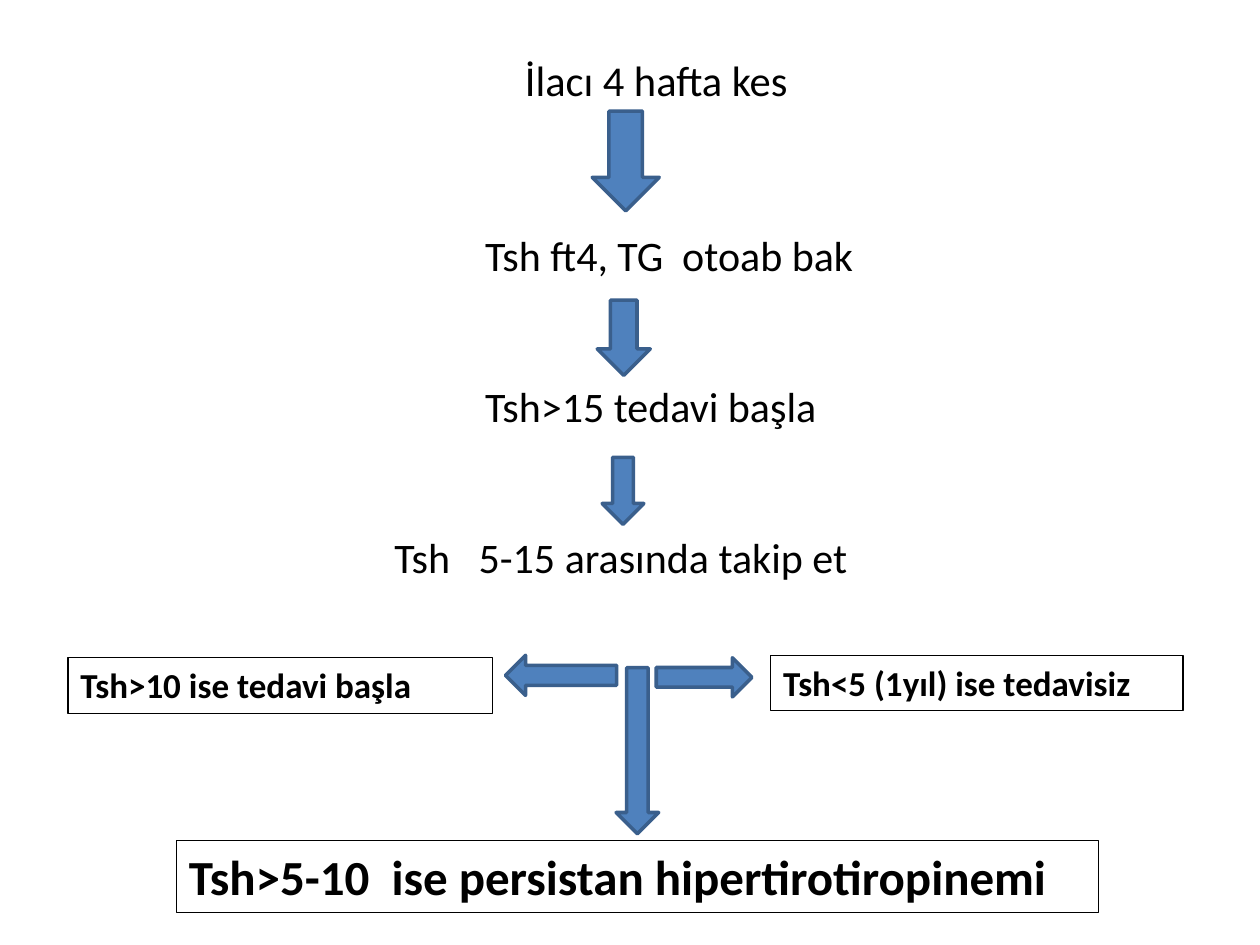
import dataclasses

import pptx
import pptx.dml.color
import pptx.enum.shapes
import pptx.enum.text
import pptx.util

Cm = pptx.util.Cm
Pt = pptx.util.Pt
RGB = pptx.dml.color.RGBColor
ARROW = pptx.enum.shapes.MSO_SHAPE
ALIGN = pptx.enum.text.PP_ALIGN


@dataclasses.dataclass(frozen=True)
class Theme:
    font: str = "Calibri"
    ink: RGB = RGB(0x00, 0x00, 0x00)
    arrow_fill: RGB = RGB(0x4F, 0x81, 0xBD)
    arrow_line: RGB = RGB(0x3A, 0x5F, 0x8C)
    heading_size: float = 24.3
    step_size: float = 24
    outcome_size: float = 20
    result_size: float = 28
    frame_width: float = 0.75
    arrow_width: float = 2


@dataclasses.dataclass(frozen=True)
class Box:
    """Position and size in centimetres."""
    left: float
    top: float
    width: float
    height: float

    def lengths(self) -> tuple:
        return tuple(Cm(value) for value in dataclasses.astuple(self))


@dataclasses.dataclass(frozen=True)
class Label:
    text: str
    box: Box
    size: float
    framed: bool = False
    align: ALIGN = ALIGN.LEFT


@dataclasses.dataclass(frozen=True)
class Arrow:
    preset: ARROW
    box: Box


THEME = Theme()
STEP_TOP, STEP_GAP, STEP_HEIGHT = 4.5, 3.05, 1.27


def step(index: int, text: str, left: float, width: float) -> Label:
    box = Box(left, STEP_TOP + index * STEP_GAP, width, STEP_HEIGHT)
    return Label(text, box, THEME.step_size)


LABELS = [
    Label("İlacı 4 hafta kes", Box(1.8, 0.96, 22.86, 1.27),
          THEME.heading_size, align=ALIGN.CENTER),
    step(0, "Tsh ft4, TG  otoab bak", 9.53, 8.2),
    step(1, "Tsh>15 tedavi başla", 9.53, 8.2),
    step(2, "Tsh   5-15 arasında takip et", 7.7, 13),
    Label("Tsh>10 ise tedavi başla", Box(1.37, 13.26, 8.56, 1.12),
          THEME.outcome_size, framed=True),
    Label("Tsh>5-10  ise persistan hipertirotiropinemi",
          Box(3.56, 16.94, 18.59, 1.45), THEME.result_size, framed=True),
    Label("Tsh<5 (1yıl) ise tedavisiz", Box(15.54, 13.21, 8.31, 1.12),
          THEME.outcome_size, framed=True),
]

ARROWS = [
    Arrow(ARROW.DOWN_ARROW, Box(11.94, 2.24, 1.35, 2.01)),
    Arrow(ARROW.DOWN_ARROW, Box(12.04, 6.05, 1.07, 1.52)),
    Arrow(ARROW.DOWN_ARROW, Box(12.14, 9.22, 0.84, 1.35)),
    Arrow(ARROW.RIGHT_ARROW, Box(13.23, 13.26, 1.93, 0.79)),
    Arrow(ARROW.DOWN_ARROW, Box(12.42, 13.46, 0.86, 3.35)),
    Arrow(ARROW.LEFT_ARROW, Box(10.19, 13.21, 2.24, 0.81)),
]


def draw_label(slide: pptx.slide.Slide, label: Label) -> None:
    """Write a line of text; framed labels are bold with a thin outline."""
    holder = slide.shapes.add_textbox(*label.box.lengths())
    frame = holder.text_frame
    frame.word_wrap = True
    frame.text = label.text
    paragraph = frame.paragraphs[0]
    paragraph.alignment = label.align
    font = paragraph.runs[0].font
    font.name = THEME.font
    font.size = Pt(label.size)
    font.bold = label.framed
    font.color.rgb = THEME.ink
    if label.framed:
        holder.line.color.rgb = THEME.ink
        holder.line.width = Pt(THEME.frame_width)


def draw_arrow(slide: pptx.slide.Slide, arrow: Arrow) -> None:
    block = slide.shapes.add_shape(arrow.preset, *arrow.box.lengths())
    block.shadow.inherit = False
    block.fill.solid()
    block.fill.fore_color.rgb = THEME.arrow_fill
    block.line.color.rgb = THEME.arrow_line
    block.line.width = Pt(THEME.arrow_width)


def main() -> None:
    deck = pptx.Presentation()
    deck.slide_width, deck.slide_height = Cm(25.4), Cm(19.05)
    slide = deck.slides.add_slide(deck.slide_layouts[6])
    for label in LABELS:
        draw_label(slide, label)
    for arrow in ARROWS:
        draw_arrow(slide, arrow)
    deck.save("out.pptx")


if __name__ == "__main__":
    main()
